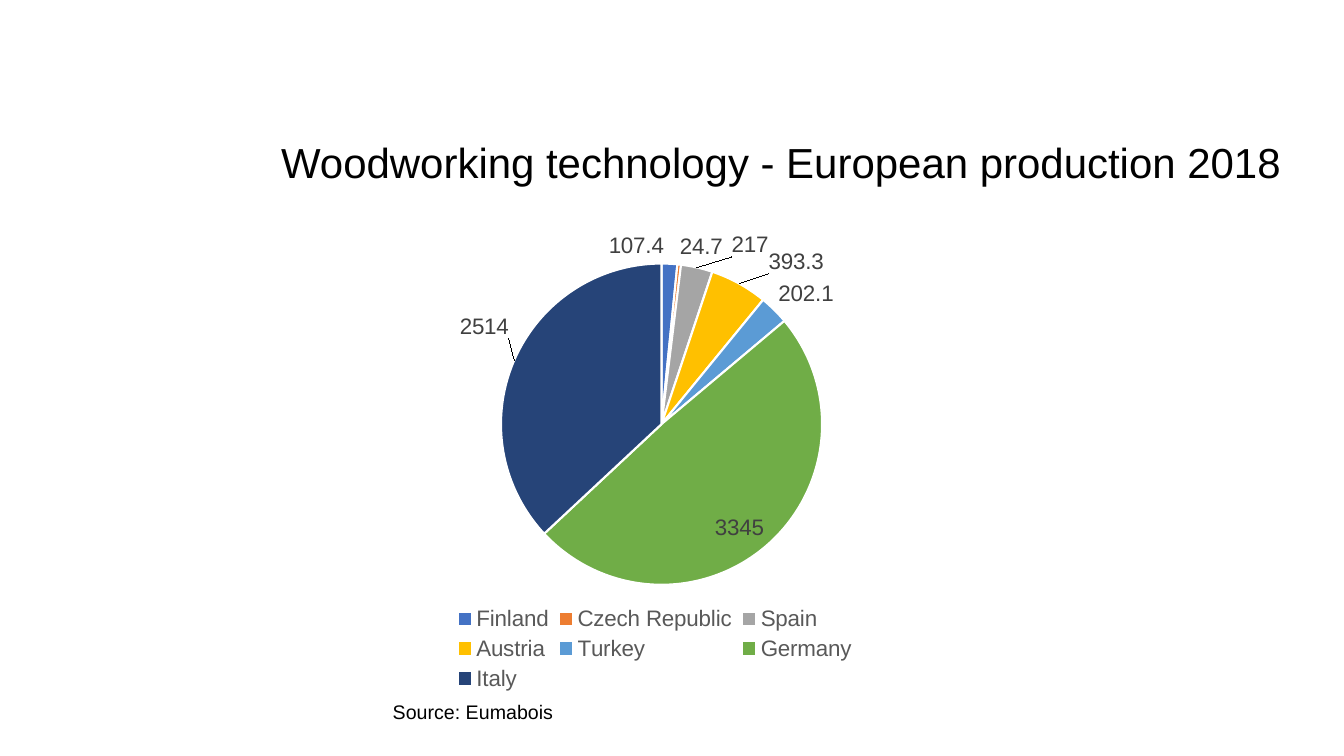
from dataclasses import dataclass

from lxml import etree
from pptx import Presentation
from pptx.chart.data import CategoryChartData
from pptx.dml.color import RGBColor
from pptx.enum.chart import XL_CHART_TYPE, XL_LABEL_POSITION, XL_LEGEND_POSITION
from pptx.enum.text import MSO_ANCHOR, PP_ALIGN
from pptx.oxml import parse_xml
from pptx.oxml.ns import nsdecls, qn
from pptx.util import Emu, Pt

PX = 9144  # 100 px to the inch


@dataclass(frozen=True)
class Theme:
    font: str = "Arial"
    ink: str = "000000"
    label: str = "404040"
    legend: str = "595959"
    edge: str = "FFFFFF"
    title_size: int = 30
    chart_size: int = 16
    source_size: int = 14


# country: (production, slice colour)
PRODUCTION = {
    "Finland": (107.4, "4472C4"),
    "Czech Republic": (24.7, "ED7D31"),
    "Spain": (217, "A5A5A5"),
    "Austria": (393.3, "FFC000"),
    "Turkey": (202.1, "5B9BD5"),
    "Germany": (3345, "70AD47"),
    "Italy": (2514, "264478"),
}
# shift of a label from its usual place, as a share of the chart
LABEL_SHIFTS = {
    "Finland": (-0.05, 0),
    "Spain": (0.05, -0.01),
    "Austria": (0.04, -0.01),
    "Italy": (0, -0.04),
}
PLOT_AREA = {"x": 0.27, "y": 0.09, "w": 0.48, "h": 0.68}
LEGEND_AREA = {"x": 0.19, "y": 0.8, "w": 0.62, "h": 0.2}


def manual_layout(sizes, modes=()):
    layout = parse_xml(f"<c:layout {nsdecls('c')}><c:manualLayout/></c:layout>")
    for tag, value in [*modes, *sizes.items()]:
        etree.SubElement(layout[0], qn(f"c:{tag}")).set("val", str(value))
    return layout


class Slide:
    def __init__(self, prs, theme):
        self.theme = theme
        self.s = prs.slides.add_slide(prs.slide_layouts[5])

    def style(self, font, size, color):
        for name, value in {"name": self.theme.font, "size": Pt(size), "bold": False}.items():
            setattr(font, name, value)
        font.color.rgb = RGBColor.from_string(color)

    def fill_text(self, sp, text, size):
        tf = sp.text_frame
        for name, value in {"word_wrap": True, "vertical_anchor": MSO_ANCHOR.TOP}.items():
            setattr(tf, name, value)
        p = tf.paragraphs[0]
        p.alignment = PP_ALIGN.LEFT
        r = p.add_run()
        r.text = text
        self.style(r.font, size, self.theme.ink)

    def title(self, text, *box):
        sp = self.s.shapes.title
        for name, value in zip(("left", "top", "width", "height"), box):
            setattr(sp, name, Emu(value * PX))
        self.fill_text(sp, text, self.theme.title_size)

    def text(self, text, *box):
        sp = self.s.shapes.add_textbox(*(Emu(v * PX) for v in box))
        self.fill_text(sp, text, self.theme.source_size)

    def pie(self, *box):
        data = CategoryChartData()
        data.categories = list(PRODUCTION)
        data.add_series("Series 1", [value for value, _ in PRODUCTION.values()])
        frame = self.s.shapes.add_chart(XL_CHART_TYPE.PIE, *(Emu(v * PX) for v in box), data)
        chart = frame.chart
        chart.has_title = False
        self.style(chart.font, self.theme.chart_size, self.theme.ink)
        plot = chart.plots[0]
        plot.vary_by_categories = True
        self.slices(chart, plot.series[0])
        self.legend(chart)
        area = chart.element.find(".//" + qn("c:plotArea"))
        for old in area.findall(qn("c:layout")):
            area.remove(old)
        modes = [("layoutTarget", "inner"), ("xMode", "edge"), ("yMode", "edge")]
        area.insert(0, manual_layout(PLOT_AREA, modes))

    def slices(self, chart, series):
        labels = series.data_labels
        labels.show_value = True
        labels.position = XL_LABEL_POSITION.OUTSIDE_END
        self.style(labels.font, self.theme.chart_size, self.theme.label)
        for i, (country, (_, color)) in enumerate(PRODUCTION.items()):
            point = series.points[i]
            point.format.fill.solid()
            point.format.fill.fore_color.rgb = RGBColor.from_string(color)
            point.format.line.color.rgb = RGBColor.from_string(self.theme.edge)
            point.format.line.width = Pt(1.5)
            label = point.data_label
            self.style(label.font, self.theme.chart_size, self.theme.label)
            inside = country == "Germany"
            label.position = (XL_LABEL_POSITION.INSIDE_END if inside
                              else XL_LABEL_POSITION.OUTSIDE_END)
            if country in LABEL_SHIFTS:
                shift = dict(zip("xy", LABEL_SHIFTS[country]))
                idx = chart.element.findall(".//" + qn("c:dLbl"))[i].find(qn("c:idx"))
                idx.addnext(manual_layout(shift))

    def legend(self, chart):
        chart.has_legend = True
        legend = chart.legend
        legend.position = XL_LEGEND_POSITION.BOTTOM
        legend.include_in_layout = False
        self.style(legend.font, self.theme.chart_size, self.theme.legend)
        element = chart.element.find(".//" + qn("c:legend"))
        for old in element.findall(qn("c:layout")):
            element.remove(old)
        modes = [("xMode", "edge"), ("yMode", "edge")]
        element.find(qn("c:legendPos")).addnext(manual_layout(LEGEND_AREA, modes))


def main():
    prs = Presentation()
    prs.slide_width, prs.slide_height = Emu(1334 * PX), Emu(750 * PX)
    slide = Slide(prs, Theme())
    slide.text("Source: Eumabois", 380, 689, 216, 34)
    slide.pie(318, 217, 664, 474)
    slide.title("Woodworking technology - European production 2018", 269, 130, 1034, 61)
    prs.save("out.pptx")


if __name__ == "__main__":
    main()
